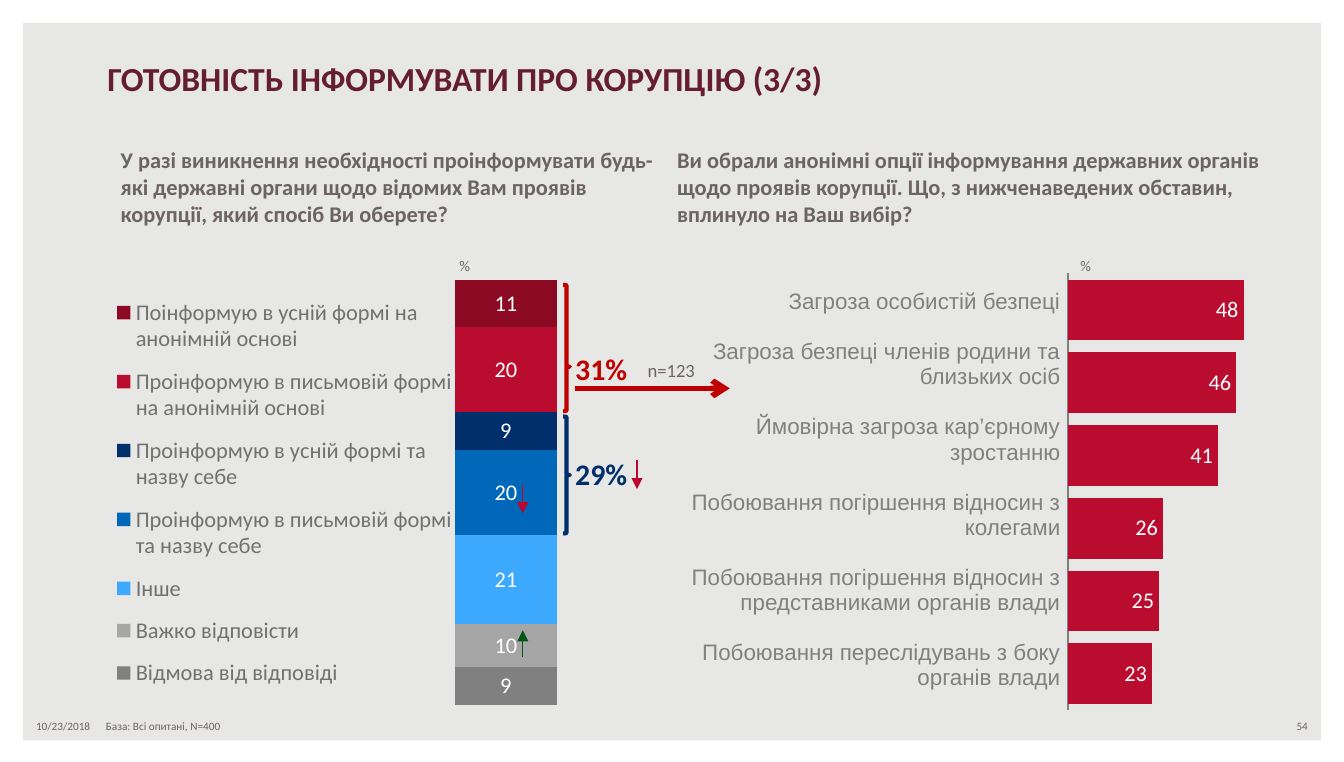
from dataclasses import dataclass

from pptx import Presentation
from pptx.chart.data import CategoryChartData
from pptx.dml.color import RGBColor
from pptx.enum.chart import XL_CHART_TYPE, XL_LABEL_POSITION, XL_LEGEND_POSITION, XL_TICK_LABEL_POSITION, XL_TICK_MARK
from pptx.enum.shapes import MSO_CONNECTOR, MSO_SHAPE
from pptx.enum.text import MSO_ANCHOR, PP_ALIGN
from pptx.oxml import parse_xml
from pptx.oxml.ns import nsdecls
from pptx.util import Inches, Pt

STACKED, BARS = XL_CHART_TYPE.COLUMN_STACKED_100, XL_CHART_TYPE.BAR_CLUSTERED
CENTER, INSIDE_END = XL_LABEL_POSITION.CENTER, XL_LABEL_POSITION.INSIDE_END
LEGEND_LEFT = XL_LEGEND_POSITION.LEFT
NO_LABELS, NO_TICKS = XL_TICK_LABEL_POSITION.NONE, XL_TICK_MARK.NONE
STRAIGHT = MSO_CONNECTOR.STRAIGHT
FRAME, BRACE = MSO_SHAPE.FRAME, MSO_SHAPE.RIGHT_BRACE
LEFT, RIGHT = PP_ALIGN.LEFT, PP_ALIGN.RIGHT
TOP, MIDDLE, BOTTOM = MSO_ANCHOR.TOP, MSO_ANCHOR.MIDDLE, MSO_ANCHOR.BOTTOM
NO_GRID_STYLE = "{2D5ABB26-0587-4C30-8999-92F81FD0307C}"


@dataclass(frozen=True)
class Theme:
    font: str = "Calibri"
    table_font: str = "Arial"
    background: str = "E7E7E5"
    white: str = "FFFFFF"
    title: str = "651D32"
    text: str = "6C6463"
    legend: str = "717171"
    gray: str = "808080"
    light_gray: str = "A6A6A6"
    sky: str = "3CA9FF"
    blue: str = "0067B9"
    navy: str = "002F6C"
    red: str = "BA0C2F"
    dark_red: str = "8B0923"
    accent: str = "C00000"
    fall: str = "BA072B"
    rise: str = "045413"
    title_size: int = 18
    total_size: int = 16
    body_size: int = 12
    base_size: int = 10
    unit_size: int = 8
    footer_size: int = 6


@dataclass(frozen=True)
class Box:
    left: float
    top: float

    def point(self, x, y):
        return Inches(self.left + x), Inches(self.top + y)

    def place(self, x, y, width, height):
        return *self.point(x, y), Inches(width), Inches(height)


THEME = Theme()
METHODS = [
    ("Відмова від відповіді", 9, THEME.gray),
    ("Важко відповісти", 10, THEME.light_gray),
    ("Інше", 21, THEME.sky),
    ("Проінформую в письмовій формі та назву себе", 20, THEME.blue),
    ("Проінформую в усній формі та назву себе", 9, THEME.navy),
    ("Проінформую в письмовій формі на анонімній основі", 20, THEME.red),
    ("Поінформую в усній формі на анонімній основі", 11, THEME.dark_red),
]
REASONS = [
    ("Загроза особистій безпеці", 48),
    ("Загроза безпеці членів родини та близьких осіб", 46),
    ("Ймовірна загроза кар’єрному зростанню", 41),
    ("Побоювання погіршення відносин з колегами", 26),
    ("Побоювання погіршення відносин з представниками органів влади", 25),
    ("Побоювання переслідувань з боку органів влади", 23),
]


def style_font(font, size, color, bold=False, name=THEME.font):
    font.name, font.size, font.bold = name, Pt(size), bold
    font.color.rgb = RGBColor.from_string(color)


def paint(fill, color):
    fill.solid()
    fill.fore_color.rgb = RGBColor.from_string(color)


def add_text(slide, area, text, size, color=THEME.text, bold=False,
             align=LEFT, anchor=TOP, wrap=True, inset=True):
    frame = slide.shapes.add_textbox(*area).text_frame
    frame.text, frame.word_wrap, frame.vertical_anchor = text, wrap, anchor
    if not inset:
        frame.margin_left = frame.margin_right = frame.margin_top = frame.margin_bottom = 0
    paragraph = frame.paragraphs[0]
    paragraph.alignment = align
    style_font(paragraph.runs[0].font, size, color, bold)


def add_arrow(slide, start, end, color, width, head):
    arrow = slide.shapes.add_connector(STRAIGHT, *start, *end)
    arrow.line.width = Pt(width)
    paint(arrow.line.fill, color)
    properties = arrow.element.xpath("p:spPr")[0]
    properties.xpath("a:ln")[0].append(parse_xml(f'<a:tailEnd {nsdecls("a")} type="{head}"/>'))
    properties.append(parse_xml(f'<a:effectLst {nsdecls("a")}/>'))


def set_layout(parent, index, x, y, width, height, inner=False):
    for layout in parent.xpath("c:layout"):
        parent.remove(layout)
    target = '<c:layoutTarget val="inner"/>' if inner else ""
    parent.insert(index, parse_xml(
        f'<c:layout {nsdecls("c")}><c:manualLayout>{target}'
        f'<c:xMode val="edge"/><c:yMode val="edge"/><c:x val="{x}"/><c:y val="{y}"/>'
        f'<c:w val="{width}"/><c:h val="{height}"/></c:manualLayout></c:layout>'))


def add_value_chart(slide, area, kind, categories, series, gap, plot_area, label_position):
    data = CategoryChartData()
    data.categories = categories
    for name, values, _ in series:
        data.add_series(name, values)
    chart = slide.shapes.add_chart(kind, *area, data).chart
    chart.has_title = chart.has_legend = False
    style_font(chart.font, THEME.body_size, THEME.legend)
    chart.value_axis.visible = chart.value_axis.has_major_gridlines = False
    plot = chart.plots[0]
    plot.gap_width, plot.overlap, plot.vary_by_categories = gap, 100, False
    for drawn, (_, _, color) in zip(plot.series, series):
        paint(drawn.format.fill, color)
        labels = drawn.data_labels
        labels.show_value, labels.position = True, label_position
        style_font(labels.font, THEME.body_size, THEME.white)
    set_layout(chart.element.xpath("c:chart/c:plotArea")[0], 0, *plot_area, inner=True)
    return chart


def add_question(slide, box, text, width, unit_left):
    add_text(slide, box.place(0, 0, width, 0.71), text, THEME.body_size, bold=True)
    add_text(slide, box.place(unit_left, 0.82, 0.28, 0.24), "%", THEME.unit_size, wrap=False)


def add_total(slide, box, text, color, brace_top, brace_height, text_top, tip):
    brace = slide.shapes.add_shape(BRACE, *box.place(3.39, brace_top, 0.05, brace_height))
    brace.adjustments[1] = tip
    brace.shadow.inherit = False
    brace.fill.background()
    brace.line.width = Pt(2.25)
    paint(brace.line.fill, color)
    add_text(slide, box.place(3.48, text_top, 0.61, 0.27), text, THEME.total_size, color,
             bold=True, inset=False)


def add_methods(slide, box):
    add_question(slide, box, "У разі виникнення необхідності проінформувати будь-які державні органи "
                 "щодо відомих Вам проявів корупції, який спосіб Ви оберете?", 4.22, 2.52)
    series = [(name, [value], color) for name, value, color in METHODS]
    chart = add_value_chart(slide, box.place(0.04, 0.87, 3.99, 3.35), STACKED, ["1"], series,
                            172, (0.476, 0.052, 0.514, 0.945), CENTER)
    chart.category_axis.visible = False
    chart.has_legend = True
    chart.legend.position, chart.legend.include_in_layout = LEGEND_LEFT, False
    style_font(chart.legend.font, THEME.body_size, THEME.legend)
    set_layout(chart.element.xpath("c:chart/c:legend")[0], 1, 0, 0.06, 0.64, 0.93)

    add_total(slide, box, "31%", THEME.accent, 1.08, 0.94, 1.57, 0.648)
    add_total(slide, box, "29%", THEME.navy, 2.06, 0.87, 2.35, 0.5)
    add_text(slide, box.place(3.92, 1.58, 0.55, 0.27), "n=123", THEME.base_size, wrap=False)
    add_arrow(slide, box.point(3.48, 1.85), box.point(4.63, 1.85), THEME.accent, 3, "arrow")
    for x, start, end, color in ((3.09, 3.85, 3.65, THEME.rise), (3.09, 2.56, 2.78, THEME.fall),
                                 (3.94, 2.38, 2.6, THEME.fall)):
        add_arrow(slide, box.point(x, start), box.point(x, end), color, 0.75, "triangle")


def add_reasons(slide, box):
    add_question(slide, box, "Ви обрали анонімні опції інформування державних органів щодо проявів "
                 "корупції. Що, з нижченаведених обставин, вплинуло на Ваш вибір?", 4.57, 3)
    reason_table = slide.shapes.add_table(2, 1, *box.place(0.19, 1.04, 2.77, 3.48))
    reason_table.element.xpath(".//a:tableStyleId")[0].text = NO_GRID_STYLE
    table = reason_table.table
    table.first_row = table.horz_banding = False
    for row, height in zip(table.rows, (3.31, 0.17)):
        row.height = Inches(height)
        cell = row.cells[0]
        cell.fill.background()
        cell.margin_left = cell.margin_right = cell.margin_top = Inches(0.01)
        cell.margin_bottom = 0
    reasons = table.cell(0, 0)
    reasons.vertical_anchor = MIDDLE
    reasons.margin_bottom = Inches(0.19)
    reasons.text_frame.text = "\n".join(name for name, _ in REASONS)
    for index, paragraph in enumerate(reasons.text_frame.paragraphs):
        paragraph.alignment = RIGHT
        paragraph.line_spacing = Pt(13.45)
        paragraph.space_before = Pt(13.45 if index else 0)
        style_font(paragraph.runs[0].font, THEME.body_size, THEME.gray, name=THEME.table_font)

    categories = [str(number) for number in range(1, len(REASONS) + 1)]
    series = [("Series 1", [value for _, value in REASONS], THEME.red)]
    chart = add_value_chart(slide, box.place(3, 0.99, 1.37, 3.37), BARS, categories, series,
                            20, (0, 0.001, 1, 0.965), INSIDE_END)
    chart.value_axis.minimum_scale, chart.value_axis.maximum_scale = 0, 50
    chart.value_axis.major_unit = 10
    axis = chart.category_axis
    axis.reverse_order, axis.tick_label_position = True, NO_LABELS
    axis.major_tick_mark = axis.minor_tick_mark = NO_TICKS
    paint(axis.format.line.fill, THEME.gray)


def add_page(slide, box):
    paint(slide.background.fill, THEME.background)
    border = slide.shapes.add_shape(FRAME, *box.place(0, 0, 10, 5.68))
    border.adjustments[0] = 0.03
    border.shadow.inherit = False
    paint(border.fill, THEME.white)
    border.line.fill.background()
    add_text(slide, box.place(0.7, 0.38, 9.08, 0.4), "ГОТОВНІСТЬ ІНФОРМУВАТИ ПРО КОРУПЦІЮ (3/3)",
             THEME.title_size, THEME.title, bold=True, anchor=BOTTOM)
    add_text(slide, box.place(0.17, 5.3, 0.67, 0.2), "10/23/2018", THEME.footer_size, anchor=MIDDLE)
    add_text(slide, box.place(0.69, 5.3, 1.18, 0.16), "База: Всі опитані, N=400", THEME.footer_size)
    add_text(slide, box.place(7.5, 5.3, 2.33, 0.2), "54", THEME.footer_size, align=RIGHT, anchor=MIDDLE)


def main():
    deck = Presentation()
    deck.slide_width, deck.slide_height = Inches(10), Inches(5.67)
    slide = deck.slides.add_slide(deck.slide_layouts[6])
    add_page(slide, Box(0, 0))
    add_methods(slide, Box(0.8, 1.04))
    add_reasons(slide, Box(4.94, 1.04))
    deck.save("out.pptx")


if __name__ == "__main__":
    main()
